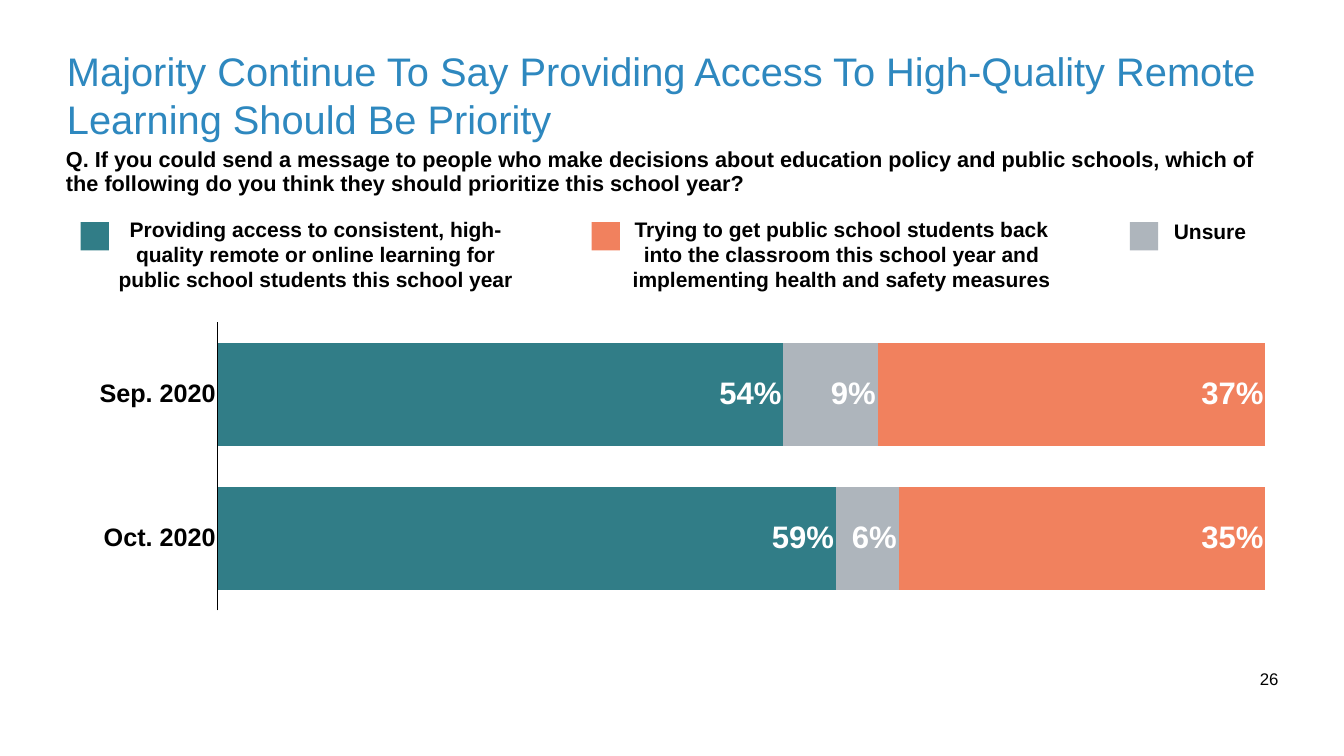
import lxml.etree
import pptx
import pptx.chart.data
import pptx.dml.color
import pptx.enum.chart
import pptx.enum.shapes
import pptx.enum.text
import pptx.oxml.ns
import pptx.util

Inches = pptx.util.Inches
Align = pptx.enum.text.PP_ALIGN
Anchor = pptx.enum.text.MSO_ANCHOR

# Content
TITLE = ("Majority Continue To Say Providing Access To High-Quality Remote "
         "Learning Should Be Priority")
QUESTION = ("Q. If you could send a message to people who make decisions about "
            "education policy and public schools, which of the following do you "
            "think they should prioritize this school year?")
PAGE_NUMBER = "26"
MONTHS = ["Sep. 2020", "Oct. 2020"]
SERIES = [
    ("Remote learning", (0.54, 0.59), "remote"),
    ("Unsure", (0.09, 0.06), "unsure"),
    ("Back to classroom", (0.37, 0.35), "classroom"),
]
# Legend: text, colour name, swatch left, text box (left, top, width, height)
LEGEND = [
    ("Providing access to consistent, high-quality remote or online learning "
     "for public school students this school year",
     "remote", 1.6, (2.23, 4.21, 8.07, 1.66)),
    ("Trying to get public school students back into the classroom this school "
     "year and implementing health and safety measures",
     "classroom", 11.74, (12.39, 4.21, 8.62, 1.66)),
    ("Unsure", "unsure", 22.42, (21.5, 4.26, 5.02, 0.66)),
]
SWATCH_TOP, SWATCH_SIZE = 4.41, 0.56
PLOT_LAYOUT = {"x": 0.127, "y": 0.088, "w": 0.868, "h": 0.861}

THEME = {
    "font": "Arial",
    "colors": {"title": "2E88BF", "text": "000000", "label": "FFFFFF",
               "remote": "317D87", "unsure": "AEB5BC", "classroom": "F1815E"},
    "sizes": {"title": 56.9, "question": 31, "legend": 30, "page": 24,
              "axis": 36, "label": 44.4},
}


def color(name):
    return pptx.dml.color.RGBColor.from_string(THEME["colors"][name])


def style_font(font, size, color_name="text", bold=False):
    font.name = THEME["font"]
    font.size = pptx.util.Pt(THEME["sizes"][size])
    font.bold = bold
    font.color.rgb = color(color_name)


def add_text(slide, box, text, size, color_name="text", bold=False,
             align=Align.LEFT, anchor=Anchor.TOP, wrap=True, line_spacing=None):
    shape = slide.shapes.add_textbox(*map(Inches, box))
    frame = shape.text_frame
    frame.text = text
    frame.word_wrap = wrap
    frame.vertical_anchor = anchor
    frame.margin_left = frame.margin_right = Inches(0.08)
    frame.margin_top = frame.margin_bottom = Inches(0.08)
    paragraph = frame.paragraphs[0]
    paragraph.alignment = align
    paragraph.line_spacing = line_spacing
    style_font(paragraph.runs[0].font, size, color_name, bold)


def set_plot_layout(chart):
    qn = pptx.oxml.ns.qn
    plot_area = chart.plots[0]._element.getparent()
    for old_layout in plot_area.findall(qn("c:layout")):
        plot_area.remove(old_layout)
    layout = lxml.etree.Element(qn("c:layout"))
    plot_area.insert(0, layout)
    manual = lxml.etree.SubElement(layout, qn("c:manualLayout"))
    settings = {"layoutTarget": "inner", "xMode": "edge", "yMode": "edge",
                **PLOT_LAYOUT}
    for tag, value in settings.items():
        lxml.etree.SubElement(manual, qn("c:" + tag)).set("val", str(value))


def add_priority_chart(slide):
    data = pptx.chart.data.CategoryChartData(number_format="0%")
    data.categories = MONTHS
    for name, values, _ in SERIES:
        data.add_series(name, values)
    chart = slide.shapes.add_chart(
        pptx.enum.chart.XL_CHART_TYPE.BAR_STACKED,
        *map(Inches, (1.28, 5.81, 23.95, 6.64)), data).chart
    chart.has_legend = False
    chart.has_title = False
    style_font(chart.font, "axis")

    # Axes
    months = chart.category_axis
    months.reverse_order = True
    months.has_major_gridlines = False
    months.major_tick_mark = pptx.enum.chart.XL_TICK_MARK.NONE
    months.format.line.color.rgb = color("text")
    months.format.line.width = pptx.util.Pt(1)
    style_font(months.tick_labels.font, "axis", bold=True)
    shares = chart.value_axis
    shares.minimum_scale, shares.maximum_scale = 0, 1
    shares.major_unit = 0.25
    shares.has_major_gridlines = False
    shares.visible = False

    # Bars and their labels
    plot = chart.plots[0]
    plot.gap_width, plot.overlap = 40, 100
    plot.vary_by_categories = False
    for series, (_, _, color_name) in zip(plot.series, SERIES):
        series.format.fill.solid()
        series.format.fill.fore_color.rgb = color(color_name)
        labels = series.data_labels
        labels.show_value = True
        labels.number_format = "#,##0%"
        labels.number_format_is_linked = False
        labels.position = pptx.enum.chart.XL_LABEL_POSITION.INSIDE_END
        style_font(labels.font, "label", "label", bold=True)
    set_plot_layout(chart)


def add_legend(slide):
    for text, color_name, swatch_left, box in LEGEND:
        add_text(slide, box, text, "legend", bold=True, align=Align.CENTER)
        swatch = slide.shapes.add_shape(
            pptx.enum.shapes.MSO_SHAPE.RECTANGLE, Inches(swatch_left),
            Inches(SWATCH_TOP), Inches(SWATCH_SIZE), Inches(SWATCH_SIZE))
        swatch.shadow.inherit = False
        swatch.fill.solid()
        swatch.fill.fore_color.rgb = color(color_name)
        swatch.line.fill.background()


def main():
    presentation = pptx.Presentation()
    presentation.slide_width = Inches(26.67)
    presentation.slide_height = Inches(15)
    slide = presentation.slides.add_slide(presentation.slide_layouts[6])

    add_text(slide, (1.25, 0.84, 24.17, 2.08), TITLE, "title", "title",
             anchor=Anchor.MIDDLE)
    add_text(slide, (24.91, 13.19, 0.55, 0.56), PAGE_NUMBER, "page",
             align=Align.CENTER, wrap=False)
    add_priority_chart(slide)
    add_legend(slide)
    add_text(slide, (1.23, 2.88, 24.17, 1.18), QUESTION, "question", bold=True,
             line_spacing=0.9)
    presentation.save("out.pptx")


if __name__ == "__main__":
    main()
